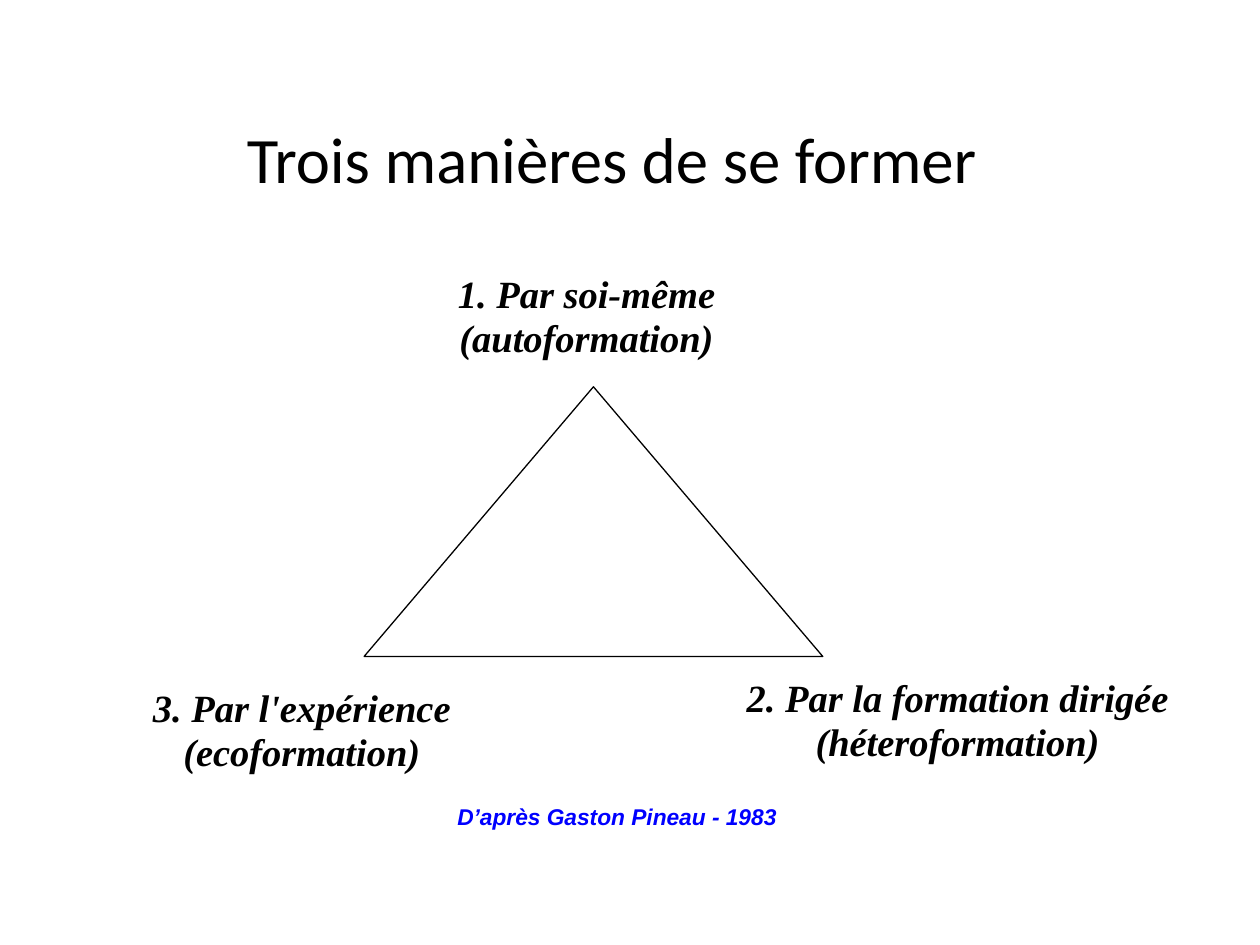
import pptx
import pptx.util
import pptx.dml.color
import pptx.enum.shapes
import pptx.enum.text

Inches = pptx.util.Inches
Pt = pptx.util.Pt
RGB = pptx.dml.color.RGBColor.from_string
KIND = pptx.enum.shapes.MSO_SHAPE
TEXT = pptx.enum.text

COLORS = {"ink": "000000", "paper": "FFFFFF", "credit": "0000FF"}

STYLES = {
    "title": {"name": "Calibri", "size": Pt(37)},
    "label": {"name": "Times New Roman", "size": Pt(22), "bold": True, "italic": True},
    "credit": {"name": "Arial", "size": Pt(13), "bold": True, "italic": True},
}

# text, (left, top, width, height)
TITLE = ("Trois manières de se former", (0.41, 0.75, 8.89, 1.07))
LABELS = [
    ("1. Par soi-même (autoformation)", (2.87, 2.12, 3.57, 0.79)),
    ("3. Par l'expérience (ecoformation)", (1.02, 5.41, 2.75, 0.79)),
    ("2. Par la formation dirigée (héteroformation)", (5.37, 5.33, 4.46, 0.79)),
]
CREDIT = ("D’après Gaston Pineau - 1983", (3.43, 6.32, 2.93, 0.31))
TRIANGLE = (2.89, 3.07, 3.64, 2.14)


def add_shape(slide, kind, place, line):
    shape = slide.shapes.add_shape(kind, *map(Inches, place))
    shape.shadow.inherit = False
    shape.line.color.rgb = RGB(COLORS[line])
    shape.line.width = Pt(0.75)
    return shape


def write(shape, text, style, color, spacing, anchor):
    frame = shape.text_frame
    frame.word_wrap = True
    frame.vertical_anchor = anchor
    frame.margin_left = frame.margin_right = Inches(0.09)
    frame.margin_top = frame.margin_bottom = Inches(0.05)
    para = frame.paragraphs[0]
    para.alignment = TEXT.PP_ALIGN.CENTER
    para.line_spacing = spacing
    run = para.add_run()
    run.text = text
    for key, value in STYLES[style].items():
        setattr(run.font, key, value)
    run.font.color.rgb = RGB(COLORS[color])


def main():
    deck = pptx.Presentation()
    deck.slide_width, deck.slide_height = Inches(10), Inches(7.5)
    slide = deck.slides.add_slide(deck.slide_layouts[6])
    top, middle = TEXT.MSO_ANCHOR.TOP, TEXT.MSO_ANCHOR.MIDDLE

    text, place = TITLE
    box = slide.shapes.add_textbox(*map(Inches, place))
    write(box, text, "title", "ink", 0.93, middle)

    for text, place in LABELS:
        label = add_shape(slide, KIND.RECTANGLE, place, "paper")
        label.fill.background()
        write(label, text, "label", "ink", 0.95, top)

    triangle = add_shape(slide, KIND.ISOSCELES_TRIANGLE, TRIANGLE, "ink")
    triangle.fill.solid()
    triangle.fill.fore_color.rgb = RGB(COLORS["paper"])

    text, place = CREDIT
    box = slide.shapes.add_textbox(*map(Inches, place))
    write(box, text, "credit", "credit", 1.0, top)
    deck.save("out.pptx")


if __name__ == "__main__":
    main()
